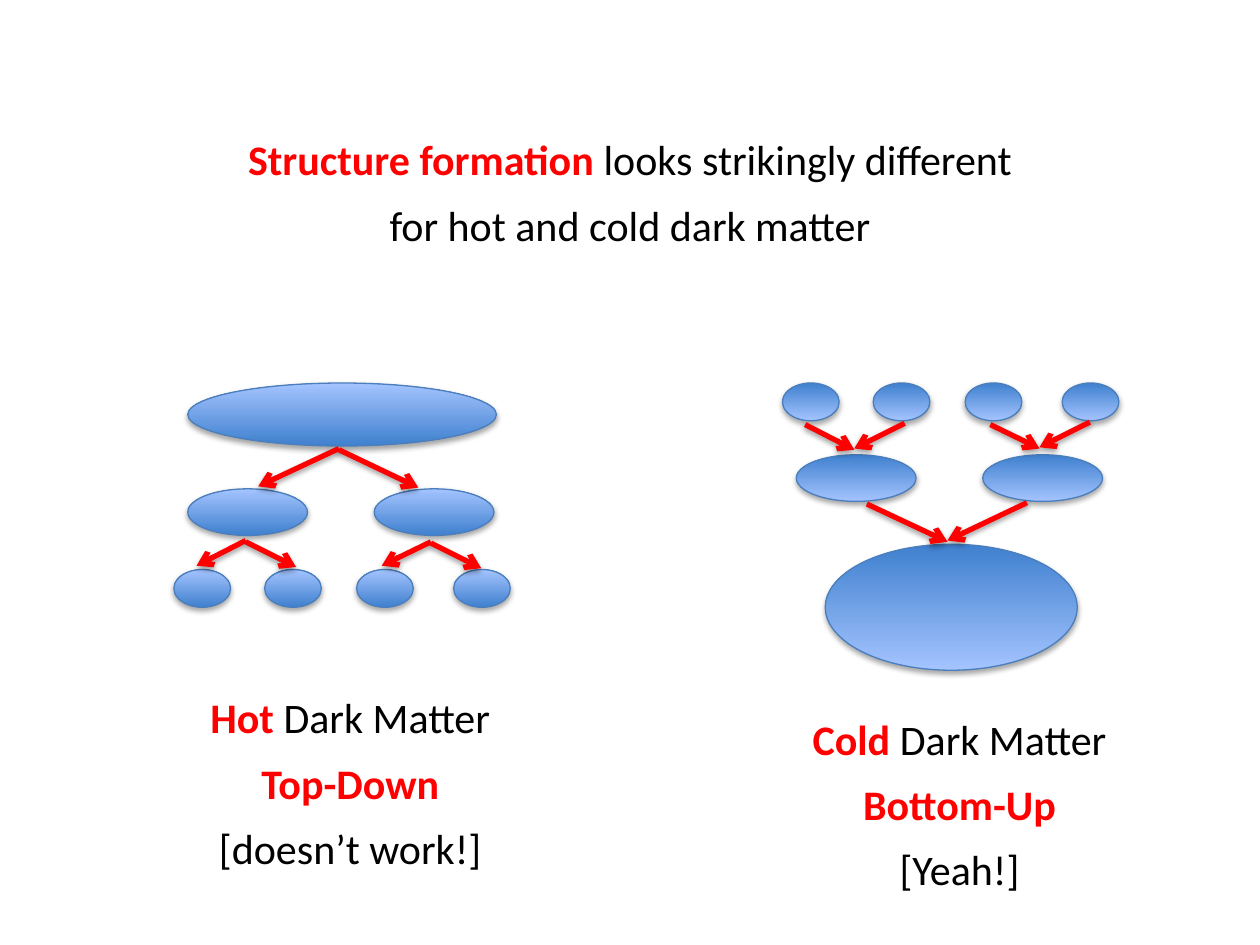
from lxml import etree
from pptx import Presentation
from pptx.dml import color
from pptx.enum import shapes, text
from pptx.oxml import ns
from pptx.util import Inches, Pt

COLORS = {"red": "FF0000", "black": "000000", "deep": "3F80CE",
          "pale": "A4C4FF", "outline": "4B7EBC"}
HALO = (1.49, 3.04, 2.45, 0.5)
MERGED_HALO = (6.55, 4.32, 2, 1)
CLUMPS = [(left, 3.88, 0.95, 0.37) for left in (1.49, 2.97)]
CLUMPS += [(left, 4.52, 0.45, 0.3) for left in (1.38, 2.1, 2.83, 3.6)]
ARROWS = [(2.69, 3.56, 2.05, 3.86), (2.69, 3.57, 3.32, 3.87),
          (1.95, 4.29, 1.56, 4.49), (1.95, 4.3, 2.35, 4.5),
          (3.42, 4.3, 3.03, 4.49), (3.42, 4.31, 3.82, 4.51)]
COLD_SHIFT = 4.83
MIRROR_SUM = 7.86


def rgb(name):
    """Return the named palette colour."""
    return color.RGBColor.from_string(COLORS[name])


def add_shadow(shape, distance, opacity):
    """Cast a soft black shadow straight down."""
    effects = etree.SubElement(shape.element.spPr, ns.qn("a:effectLst"))
    shadow = etree.SubElement(effects, ns.qn("a:outerShdw"), blurRad="40000",
                              dist=str(distance), dir="5400000", rotWithShape="0")
    black = etree.SubElement(shadow, ns.qn("a:srgbClr"), val=COLORS["black"])
    etree.SubElement(black, ns.qn("a:alpha"), val=str(opacity * 1000))


def add_ellipse(group, box, flipped):
    """Add a shaded ellipse, optionally flipped vertically."""
    ellipse = group.shapes.add_shape(shapes.MSO_SHAPE.OVAL, *map(Inches, box))
    ellipse.fill.gradient()
    ellipse.fill.gradient_angle = 90
    for stop, name in zip(ellipse.fill.gradient_stops, ("deep", "pale")):
        stop.color.rgb = rgb(name)
    ellipse.line.color.rgb = rgb("outline")
    ellipse.line.width = Pt(0.75)
    if flipped:
        ellipse.element.spPr.xfrm.set("flipV", "1")
    add_shadow(ellipse, 23000, 35)


def add_arrow(group, points, end):
    """Add a thick red line with an open arrowhead at the given end."""
    arrow = group.shapes.add_connector(shapes.MSO_CONNECTOR.STRAIGHT, *map(Inches, points))
    arrow.line.color.rgb = rgb("red")
    arrow.line.width = Pt(3)
    etree.SubElement(arrow.line._get_or_add_ln(), ns.qn(end), type="arrow")
    add_shadow(arrow, 20000, 38)


def add_tree(slide, cold):
    """Add the splitting tree, or its shifted mirror image for cold matter."""
    group = slide.shapes.add_group_shape()
    add_ellipse(group, MERGED_HALO if cold else HALO, cold)
    for left, top, width, height in CLUMPS:
        if cold:
            left, top = left + COLD_SHIFT, MIRROR_SUM - top - height
        add_ellipse(group, (left, top, width, height), cold)
    for x1, y1, x2, y2 in ARROWS:
        if cold:
            x1, x2 = x1 + COLD_SHIFT, x2 + COLD_SHIFT
            y1, y2 = MIRROR_SUM - y1, MIRROR_SUM - y2
        add_arrow(group, (x1, y1, x2, y2), "a:headEnd" if cold else "a:tailEnd")


def write_text(shape, box, lines):
    """Place a shape and write centred lines of (red part, black part)."""
    shape.left, shape.top, shape.width, shape.height = map(Inches, box)
    frame = shape.text_frame
    frame.text = "\n".join(red + black for red, black in lines)
    frame.word_wrap = False
    frame.auto_size = text.MSO_AUTO_SIZE.SHAPE_TO_FIT_TEXT
    frame.vertical_anchor = text.MSO_ANCHOR.TOP
    for paragraph, (red, black) in zip(frame.paragraphs, lines):
        paragraph.alignment = text.PP_ALIGN.CENTER
        paragraph.line_spacing = 1.3
        paragraph.text = red or black
        if red and black:
            paragraph.add_run().text = black
        for index, run in enumerate(paragraph.runs):
            highlighted = bool(red) and index == 0
            run.font.name = "Calibri"
            run.font.size = Pt(24)
            run.font.bold = highlighted
            run.font.color.rgb = rgb("red" if highlighted else "black")


def add_caption(slide, box, lines):
    """Add a caption below a tree."""
    write_text(slide.shapes.add_textbox(*map(Inches, box)), box, lines)


def main():
    """Build and save the slide."""
    presentation = Presentation()
    presentation.slide_width = Inches(10)
    presentation.slide_height = Inches(7.5)
    slide = presentation.slides.add_slide(presentation.slide_layouts[5])
    write_text(slide.shapes.title, (1.85, 0.89, 6.3, 1.13), [
        ("Structure formation ", "looks strikingly different "),
        ("", "for hot and cold dark matter")])
    add_tree(slide, cold=False)
    add_tree(slide, cold=True)
    add_caption(slide, (1.56, 5.32, 2.44, 1.66), [
        ("Hot", " Dark Matter"), ("Top-Down", ""), ("", "[doesn’t work!]")])
    add_caption(slide, (6.34, 5.49, 2.55, 1.66), [
        ("Cold", " Dark Matter"), ("Bottom-Up", ""), ("", "[Yeah!]")])
    presentation.save("out.pptx")


if __name__ == "__main__":
    main()
